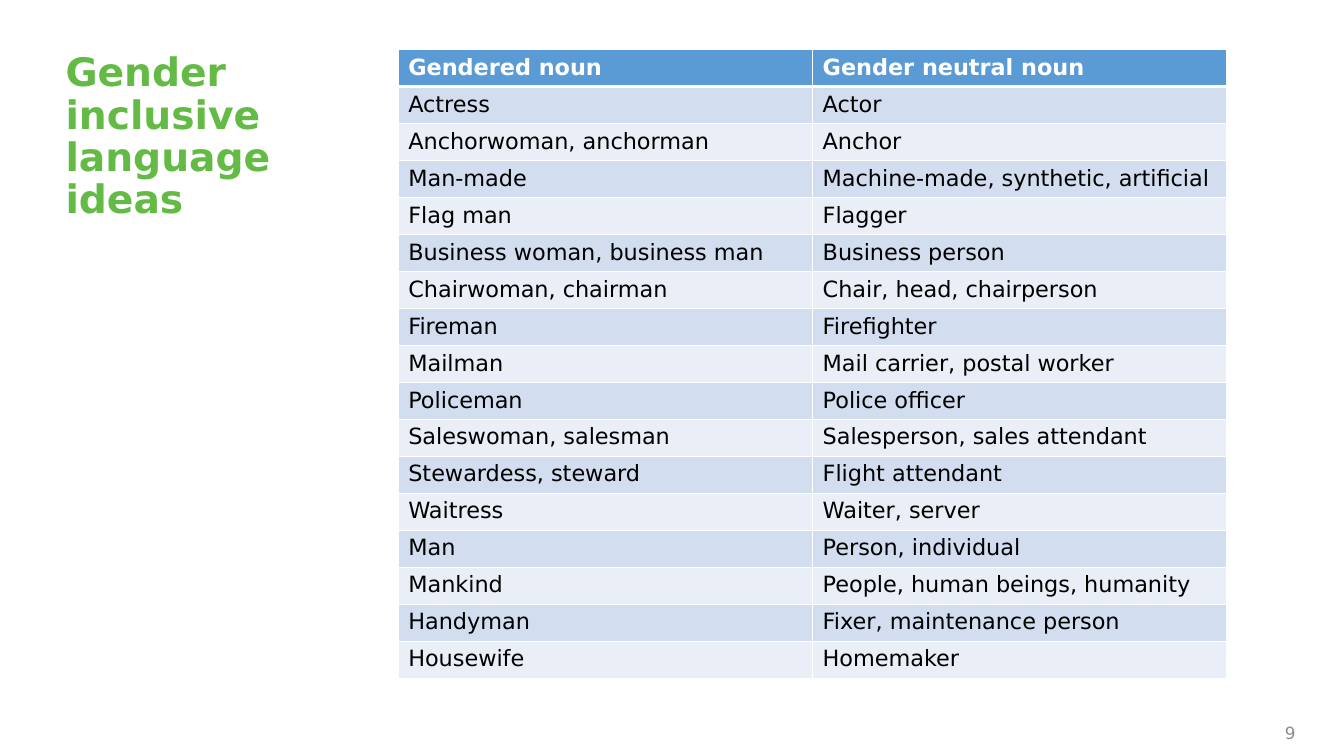
"""Build a slide pairing gendered nouns with gender neutral ones."""
import dataclasses

import lxml.etree
import pptx
import pptx.dml.color
import pptx.enum.text
import pptx.oxml.ns
import pptx.util

Inches = pptx.util.Inches
RGBColor = pptx.dml.color.RGBColor
Align = pptx.enum.text.PP_ALIGN
Anchor = pptx.enum.text.MSO_ANCHOR

FONT = "DejaVu Sans"
GREEN = RGBColor(0x63, 0xBB, 0x46)
GRAY = RGBColor(0x8C, 0x8C, 0x8C)
WHITE = RGBColor(0xFF, 0xFF, 0xFF)
BLACK = RGBColor(0x00, 0x00, 0x00)
HEADER_BLUE = RGBColor(0x5B, 0x9B, 0xD5)
DARK_BAND = RGBColor(0xD2, 0xDE, 0xEF)
LIGHT_BAND = RGBColor(0xEA, 0xEF, 0xF7)


@dataclasses.dataclass(frozen=True)
class NounPair:
    gendered: str
    neutral: str


@dataclasses.dataclass(frozen=True)
class RowStyle:
    fill: RGBColor
    color: RGBColor
    bold: bool
    top: int
    bottom: int


NOUNS = [
    NounPair("Gendered noun", "Gender neutral noun"),
    NounPair("Actress", "Actor"),
    NounPair("Anchorwoman, anchorman", "Anchor"),
    NounPair("Man-made", "Machine-made, synthetic, artificial"),
    NounPair("Flag man", "Flagger"),
    NounPair("Business woman, business man", "Business person"),
    NounPair("Chairwoman, chairman", "Chair, head, chairperson"),
    NounPair("Fireman", "Firefighter"),
    NounPair("Mailman", "Mail carrier, postal worker"),
    NounPair("Policeman", "Police officer"),
    NounPair("Saleswoman, salesman", "Salesperson, sales attendant"),
    NounPair("Stewardess, steward", "Flight attendant"),
    NounPair("Waitress", "Waiter, server"),
    NounPair("Man", "Person, individual"),
    NounPair("Mankind", "People, human beings, humanity"),
    NounPair("Handyman", "Fixer, maintenance person"),
    NounPair("Housewife", "Homemaker"),
]


def write_text(frame, text: str, *, size: float, color: RGBColor, bold: bool = False,
               align=Align.LEFT, line_spacing: float = 1.0) -> None:
    """Write one formatted paragraph into a text frame."""
    para = frame.paragraphs[0]
    para.alignment = align
    para.line_spacing = line_spacing
    span = para.add_run()
    span.text = text
    span.font.name = FONT
    span.font.size = pptx.util.Pt(size)
    span.font.bold = bold
    span.font.color.rgb = color


def add_box(page, left: float, top: float, width: float, height: float, anchor):
    """Add a wrapping text box without margins and return its text frame."""
    box = page.shapes.add_textbox(Inches(left), Inches(top), Inches(width), Inches(height))
    frame = box.text_frame
    frame.word_wrap = True
    frame.vertical_anchor = anchor
    frame.margin_left = frame.margin_right = frame.margin_top = frame.margin_bottom = 0
    return frame


def add_border(cell, side: str, points: int) -> None:
    """Draw a white border on one side of a cell."""
    qn = pptx.oxml.ns.qn
    properties = cell._tc.get_or_add_tcPr()
    line = lxml.etree.SubElement(properties, qn(f"a:ln{side}"), w=str(pptx.util.Pt(points)))
    fill = lxml.etree.SubElement(line, qn("a:solidFill"))
    lxml.etree.SubElement(fill, qn("a:srgbClr"), val=str(WHITE))


def row_style(index: int) -> RowStyle:
    """Return the header style or the banded body style of a row."""
    if index == 0:
        return RowStyle(HEADER_BLUE, WHITE, True, 1, 3)
    band = DARK_BAND if index % 2 else LIGHT_BAND
    return RowStyle(band, BLACK, False, 3 if index == 1 else 1, 1)


def add_noun_table(page) -> None:
    """Add the two-column table of nouns."""
    height = Inches(6.23)
    holder = page.shapes.add_table(
        len(NOUNS), 2, Inches(3.95), Inches(0.49), Inches(8.22), height)
    table = holder.table
    for index, pair in enumerate(NOUNS):
        style = row_style(index)
        table.rows[index].height = Inches(0.29 if index else 0.27)
        for cell, text in zip(table.rows[index].cells, dataclasses.astuple(pair)):
            for side, points in (("L", 1), ("R", 1), ("T", style.top), ("B", style.bottom)):
                add_border(cell, side, points)
            cell.fill.solid()
            cell.fill.fore_color.rgb = style.fill
            write_text(cell.text_frame, text, size=16, color=style.color, bold=style.bold)
    holder.height = height


def main() -> None:
    """Build and save the deck."""
    deck = pptx.Presentation()
    deck.slide_width = Inches(13.33)
    deck.slide_height = Inches(7.5)
    page = deck.slides.add_slide(deck.slide_layouts[6])
    write_text(add_box(page, 0.65, 0.49, 2.75, 1.75, Anchor.MIDDLE),
               "Gender inclusive language ideas",
               size=28, color=GREEN, bold=True, line_spacing=0.9)
    write_text(add_box(page, 9.85, 6.97, 3, 0.4, Anchor.BOTTOM), "9",
               size=12, color=GRAY, align=Align.RIGHT)
    add_noun_table(page)
    deck.save("out.pptx")


if __name__ == "__main__":
    main()
